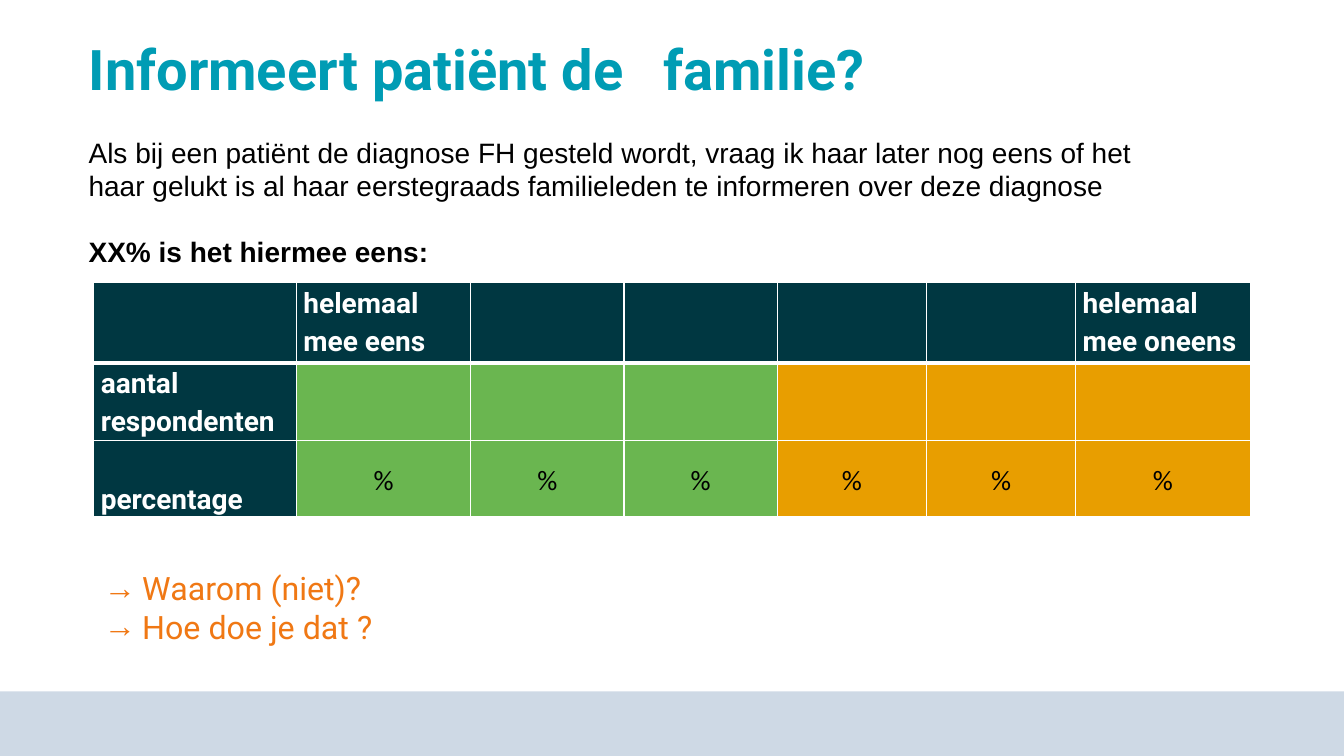
from lxml import etree
from pptx import Presentation
from pptx.dml.color import RGBColor
from pptx.enum.shapes import MSO_SHAPE
from pptx.enum.text import MSO_ANCHOR, MSO_AUTO_SIZE, PP_ALIGN
from pptx.oxml.ns import qn
from pptx.util import Inches, Pt

TEAL = RGBColor(0x00, 0x9C, 0xB4)
NAVY = RGBColor(0x00, 0x37, 0x41)
GREEN = RGBColor(0x6A, 0xB6, 0x50)
AMBER = RGBColor(0xE8, 0x9E, 0x00)
ORANGE = RGBColor(0xF0, 0x78, 0x14)
BAND = RGBColor(0xCE, 0xD9, 0xE5)
WHITE = RGBColor(0xFF, 0xFF, 0xFF)
BLACK = RGBColor(0x00, 0x00, 0x00)

TITLE = "Informeert patiënt de\tfamilie?"
STATEMENT = [
    "Als bij een patiënt de diagnose FH gesteld wordt, vraag ik haar later nog eens "
    "of het haar gelukt is al haar eerstegraads familieleden te informeren over deze diagnose",
    "XX% is het hiermee eens:",
]
ANSWERS = [
    ["", "helemaal mee eens", "", "", "", "", "helemaal mee oneens"],
    ["aantal\nrespondenten"] + [""] * 6,
    ["percentage"] + ["%"] * 6,
]
QUESTIONS = ["Waarom (niet)?", "Hoe doe je dat ?"]

WIDTH, HEIGHT = 13.33, 7.5
MARGIN, INDENTED = 0.78, 0.93
COLUMNS = [2.01, 1.73, 1.52, 1.52, 1.48, 1.48, 1.73]
ROWS = [0.8, 0.76, 0.76]
AGREE_COLUMNS = 3
BAND_HEIGHT = 0.64


def place(sp, left, top, width, height):
    sp.left, sp.top, sp.width, sp.height = map(Inches, (left, top, width, height))


def style(p, name, size, color, bold=False):
    for r in p.runs:
        r.font.name, r.font.size, r.font.bold = name, Pt(size), bold
        r.font.color.rgb = color


def set_border(cell, side, points):
    ln = etree.SubElement(cell._tc.get_or_add_tcPr(), qn(f"a:ln{side}"), w=str(Pt(points)))
    fill = etree.SubElement(ln, qn("a:solidFill"))
    etree.SubElement(fill, qn("a:srgbClr"), val=str(WHITE))


def add_band(s):
    sp = s.shapes.add_shape(MSO_SHAPE.RECTANGLE, 0, 0, 0, 0)
    place(sp, 0, HEIGHT - BAND_HEIGHT, WIDTH, BAND_HEIGHT)
    sp.shadow.inherit = False
    sp.fill.solid()
    sp.fill.fore_color.rgb = BAND
    sp.line.fill.background()


def fill_title(sp):
    place(sp, MARGIN, 0.36, 10.68, 0.71)
    tf = sp.text_frame
    tf.text = TITLE
    tf.auto_size = MSO_AUTO_SIZE.NONE
    tf.vertical_anchor = MSO_ANCHOR.MIDDLE
    p = tf.paragraphs[0]
    tabs = etree.SubElement(p._p.get_or_add_pPr(), qn("a:tabLst"))
    etree.SubElement(tabs, qn("a:tab"), pos=str(Inches(5.7)), algn="l")
    p.alignment, p.line_spacing = PP_ALIGN.LEFT, 0.9
    style(p, "Roboto", 40, TEAL, True)


def add_statement(s):
    sp = s.shapes.add_textbox(0, 0, 0, 0)
    place(sp, MARGIN, 1.29, 10.95, 1.45)
    tf = sp.text_frame
    tf.word_wrap = True
    tf.text = "\n".join(STATEMENT)
    explanation, result = tf.paragraphs
    style(explanation, "Arial", 20, BLACK)
    style(result, "Arial", 20, BLACK, True)
    result.space_before = Pt(23)


def fill_questions(sp):
    place(sp, INDENTED, 5.59, 11.02, 0.88)
    tf = sp.text_frame
    tf.text = "\n".join(QUESTIONS)
    tf.auto_size = MSO_AUTO_SIZE.NONE
    for p in tf.paragraphs:
        pPr = p._p.get_or_add_pPr()
        pPr.set("marL", str(Inches(0.38)))
        pPr.set("indent", str(-Inches(0.38)))
        etree.SubElement(pPr, qn("a:buChar"), char="→")
        p.space_before = Pt(0)
        style(p, "Roboto", 23, ORANGE)


def format_cell(cell, row, col):
    header = row == 0 or col == 0
    for side in "LRTB":
        heavy = (row, side) in ((0, "B"), (1, "T"))
        set_border(cell, side, 3 if heavy else 1)
    cell.fill.solid()
    cell.fill.fore_color.rgb = NAVY if header else GREEN if col <= AGREE_COLUMNS else AMBER
    cell.margin_left = cell.margin_right = Inches(0.07)
    cell.margin_top = cell.margin_bottom = 0
    if header:
        cell.vertical_anchor = MSO_ANCHOR.BOTTOM if row == 2 else MSO_ANCHOR.TOP
    else:
        cell.vertical_anchor = MSO_ANCHOR.MIDDLE
    for p in cell.text_frame.paragraphs:
        p.line_spacing = 1.15
        p.alignment = PP_ALIGN.LEFT if header else PP_ALIGN.CENTER
        style(p, "Roboto" if header else "Calibri", 20, WHITE if header else BLACK, header)


def add_answers(s):
    frame = s.shapes.add_table(len(ROWS), len(COLUMNS), 0, 0, 0, 0)
    place(frame, INDENTED, 2.8, sum(COLUMNS), sum(ROWS))
    table = frame.table
    for column, width in zip(table.columns, COLUMNS):
        column.width = Inches(width)
    for row, height in zip(table.rows, ROWS):
        row.height = Inches(height)
    for i, texts in enumerate(ANSWERS):
        for j, text in enumerate(texts):
            cell = table.cell(i, j)
            cell.text_frame.text = text
            format_cell(cell, i, j)


def main():
    prs = Presentation()
    prs.slide_width, prs.slide_height = Inches(WIDTH), Inches(HEIGHT)
    s = prs.slides.add_slide(prs.slide_layouts[1])
    add_band(s)
    fill_title(s.shapes.title)
    add_statement(s)
    add_answers(s)
    fill_questions(s.placeholders[1])
    prs.save("out.pptx")


if __name__ == "__main__":
    main()
